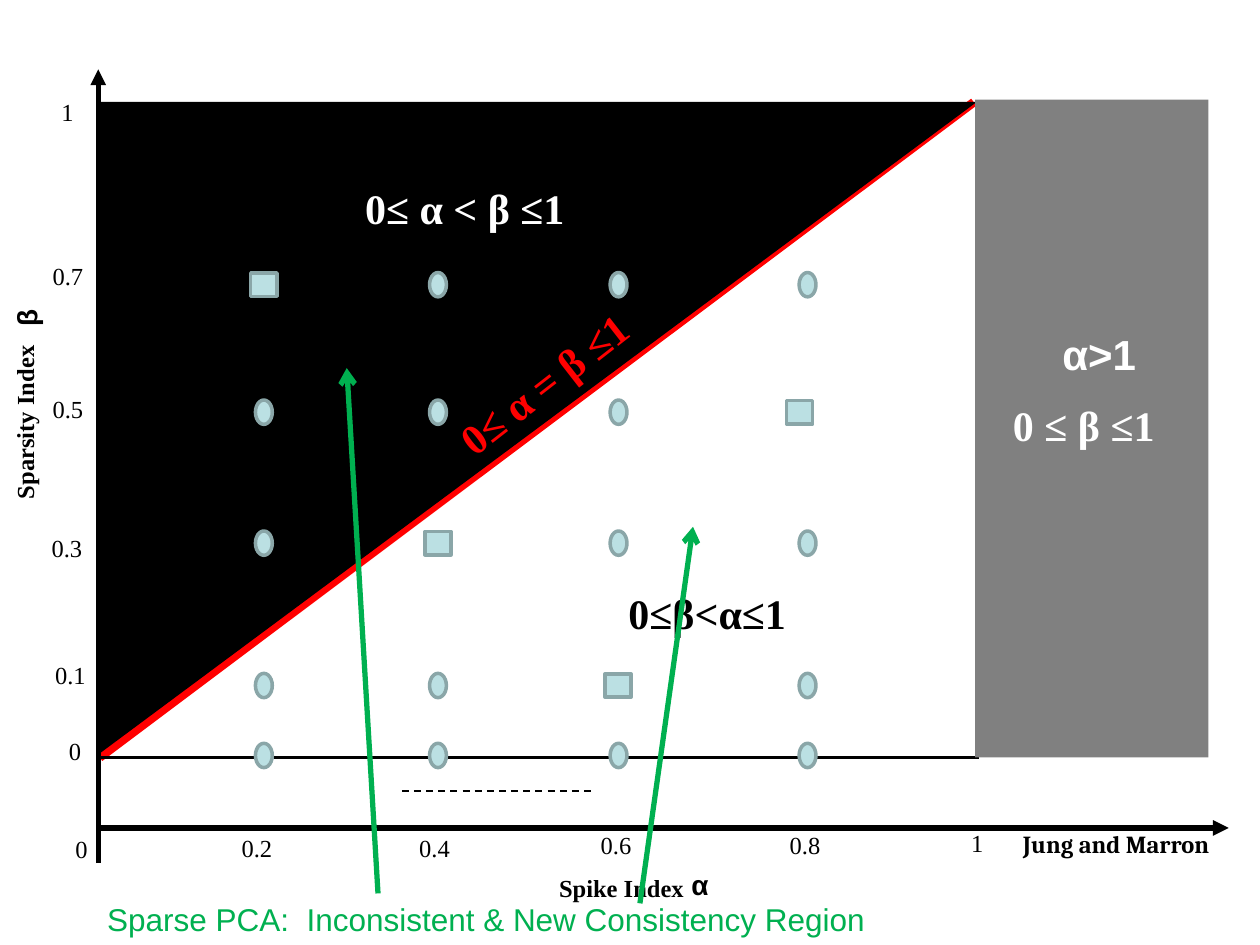
import lxml.etree
import pptx
import pptx.dml.color
import pptx.enum.dml
import pptx.enum.shapes
import pptx.enum.text
import pptx.oxml.ns
import pptx.util
from pptx.util import Cm

BLACK, WHITE, RED, GREEN, GRAY = "000000", "FFFFFF", "FF0000", "00B050", "808080"
MARKER_FILL, MARKER_LINE = "BBE0E3", "8AA6A8"
SERIF, SANS = "Times New Roman", "Arial"

COLUMNS = {0.2: 5.32, 0.4: 8.83, 0.6: 12.47, 0.8: 16.28}
ROWS = {0.7: 5.74, 0.5: 8.31, 0.3: 10.95, 0.1: 13.82, 0: 15.23}
SQUARES = {(0.2, 0.7): 5.32, (0.4, 0.3): 8.83, (0.6, 0.1): 12.46, (0.8, 0.5): 16.12}

TICKS = [
    ("1", 0.99, 1.83), ("0.7", 0.81, 5.13), ("0.5", 0.81, 7.82),
    ("0.3", 0.79, 10.62), ("0.1", 0.86, 13.18), ("0", 1.14, 14.71),
    ("0", 1.27, 16.69), ("0.2", 4.62, 16.66), ("0.4", 8.2, 16.66),
    ("0.6", 11.86, 16.61), ("0.8", 15.67, 16.61), ("1", 19.33, 16.56),
]
AXIS_TITLES = [
    ("Spike Index", (11.02, 17.48, 8.26, 1.07), dict(size=14)),
    ("α", (13.69, 17.37, 2.77, 1.07), dict(size=16, font=SANS)),
    ("Sparsity Index", (-3.23, 6.17, 7.44, 0.84), dict(size=14, rotation=270)),
    ("β", (-0.23, 5.49, 1.63, 1.04), dict(size=16, font=SANS, rotation=270)),
    ("Jung and Marron", (20.37, 16.59, 4.9, 0.94), dict(size=14, font="Cambria")),
]
REGIONS = [
    ("0≤ α < β ≤1", (7.11, 3.56, 8.31, 2.82), dict(color=WHITE)),
    ("0≤β<α≤1", (12.42, 11.71, 6.63, 2.82), dict(color=BLACK)),
    ("0≤ α = β ≤1", (8.53, 5.84, 8.31, 2.06), dict(color=RED, rotation=322)),
]
BACK_LINES = [
    ((8.1, 15.95), (11.91, 15.95), dict(width=1, dashed=True)),
    ((2.01, 15.27), (19.63, 2.06), dict(color=RED, width=5)),
]
AXES = [
    ((1.98, 16.69), (24.77, 16.69), dict(width=3, head="triangle")),
    ((2.01, 15.27), (19.74, 15.27), dict(width=1.5)),
    ((1.98, 17.4), (1.98, 1.4), dict(width=3, head="triangle")),
]
POINTERS = [
    ((7.62, 18.01), (6.99, 7.42), dict(color=GREEN, width=3, head="arrow")),
    ((12.9, 18.21), (13.97, 10.62), dict(color=GREEN, width=3, head="arrow")),
]

deck = pptx.Presentation()
deck.slide_width, deck.slide_height = Cm(25.4), Cm(19.05)
page = deck.slides.add_slide(deck.slide_layouts[6])
KINDS = pptx.enum.shapes.MSO_SHAPE


def rgb(code):
    return pptx.dml.color.RGBColor.from_string(code)


def add_line(start, end, color=BLACK, width=1, dashed=False, head=None):
    line = page.shapes.add_connector(
        pptx.enum.shapes.MSO_CONNECTOR.STRAIGHT, *map(Cm, start + end))
    line.line.color.rgb = rgb(color)
    line.line.width = pptx.util.Pt(width)
    if dashed:
        line.line.dash_style = pptx.enum.dml.MSO_LINE.DASH
    if head:
        tail = lxml.etree.SubElement(
            line.line._get_or_add_ln(), pptx.oxml.ns.qn("a:tailEnd"))
        tail.set("type", head)
    lxml.etree.SubElement(
        line._element.spPr, pptx.oxml.ns.qn("a:effectLst"))


def add_figure(kind, frame, fill, outline=None, width=2, rotation=0):
    figure = page.shapes.add_shape(kind, *map(Cm, frame))
    figure.shadow.inherit = False
    figure.rotation = rotation
    figure.fill.solid()
    figure.fill.fore_color.rgb = rgb(fill)
    if outline:
        figure.line.color.rgb = rgb(outline)
        figure.line.width = pptx.util.Pt(width)
    else:
        figure.line.fill.background()


def add_marker(kind, x, y, width, height):
    frame = (x - width / 2, y - height / 2, width, height)
    add_figure(kind, frame, MARKER_FILL, MARKER_LINE)


def write(para, text, size=24, font=SERIF, color=BLACK, bold=True):
    span = para.add_run()
    span.text = text
    span.font.size = pptx.util.Pt(size)
    span.font.name = font
    span.font.bold = bold
    span.font.color.rgb = rgb(color)


def add_text(text, frame, rotation=0, **style):
    box = page.shapes.add_textbox(*map(Cm, frame))
    box.rotation = rotation
    box.text_frame.word_wrap = True
    write(box.text_frame.paragraphs[0], text, **style)
    return box


for start, end, style in BACK_LINES:
    add_line(start, end, **style)
add_figure(KINDS.RIGHT_TRIANGLE, (4.27, -0.2, 13.11, 17.65), BLACK, BLACK, 0.75, 90)
for start, end, style in AXES:
    add_line(start, end, **style)
add_figure(KINDS.RECTANGLE, (19.66, 2.01, 4.7, 13.26), GRAY)

for alpha, x in COLUMNS.items():
    for beta, y in ROWS.items():
        if (alpha, beta) in SQUARES:
            add_marker(KINDS.RECTANGLE, SQUARES[alpha, beta], y, 0.53, 0.47)
        else:
            add_marker(KINDS.OVAL, x, y, 0.34, 0.49)

for text, left, top in TICKS:
    add_text(text, (left, top, 1.5, 1.12), size=14, bold=False)
for text, frame, style in AXIS_TITLES + REGIONS:
    add_text(text, frame, **style)

outer = add_text("α>1", (19.53, 6.5, 5.26, 3.94), font=SANS, color=WHITE)
outer.text_frame.paragraphs[0].alignment = pptx.enum.text.PP_ALIGN.CENTER
para = outer.text_frame.add_paragraph()
para.space_before = pptx.util.Pt(12)
para._p.get_or_add_pPr().set("marL", str(Cm(0.64)))
write(para, "0 ≤ β ≤1", color=WHITE)

add_text("Sparse PCA:  Inconsistent & New Consistency Region",
         (1.91, 18.01, 15.93, 1.02), size=18, font=SANS, color=GREEN, bold=False)
for start, end, style in POINTERS:
    add_line(start, end, **style)

deck.save("out.pptx")
